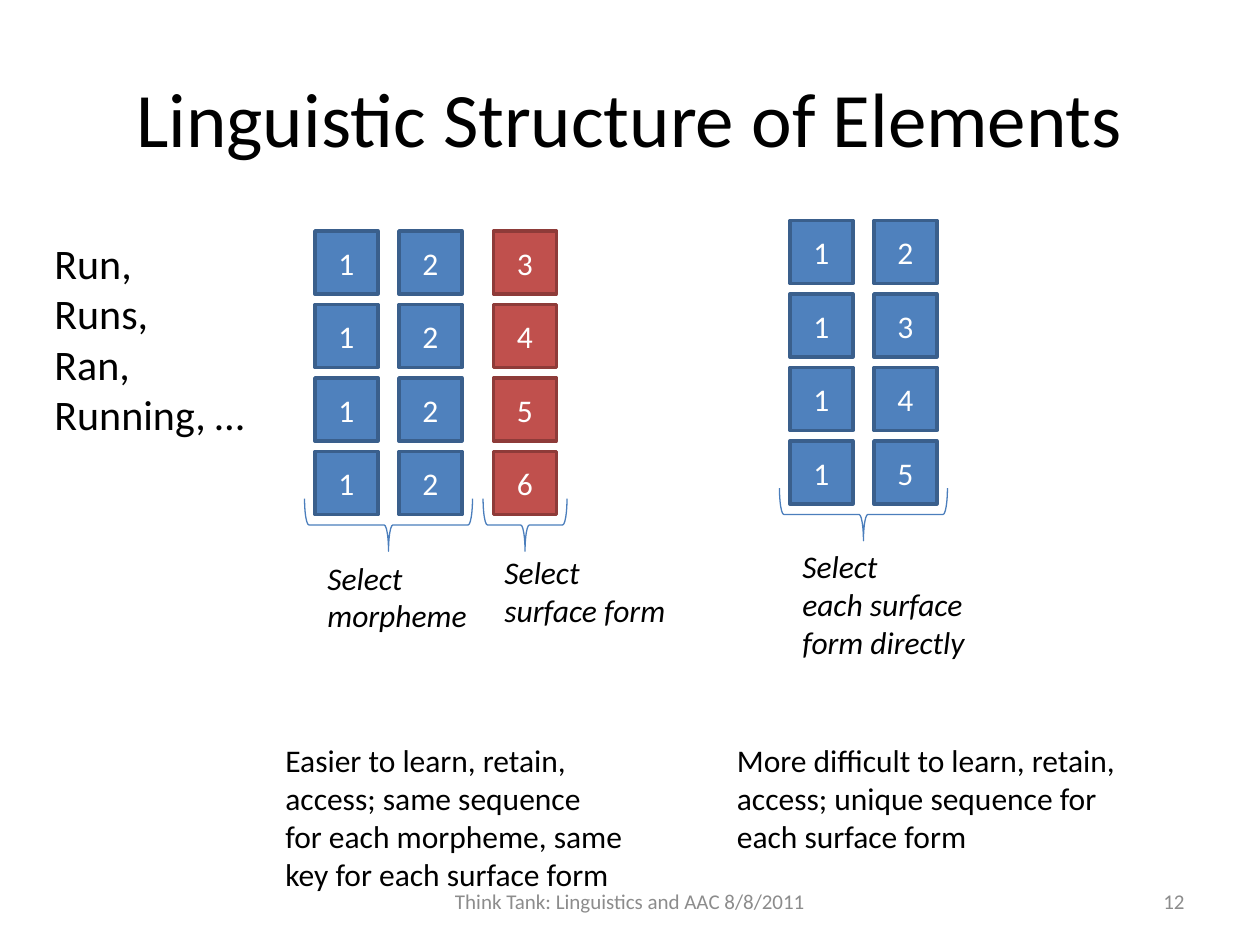
from pptx import Presentation
from pptx.dml.color import RGBColor
from pptx.enum.shapes import MSO_SHAPE as Preset
from pptx.enum.text import MSO_ANCHOR as Anchor, MSO_AUTO_SIZE as AutoSize, PP_ALIGN as Align
from pptx.util import Pt

BLACK, WHITE, GREY = "000000", "FFFFFF", "8C8C8C"
BLUE, RED = ("4F81BD", "3A5F8C"), ("C0504D", "8E3B39")
BRACE_LINE = "4B7EBC"
TILE, ROW_PITCH = 36, 42
BRACE_MARGIN, BRACE_DROP, BRACE_HEIGHT = 6, 27, 30

# Each group: top, then columns as (left, colours, digits), top to bottom,
# then braces as (first column, last column)
KEY_GROUPS = [
    (132, [(180, BLUE, "1111"), (228, BLUE, "2222"), (282, RED, "3456")], [(0, 1), (2, 2)]),
    (126, [(451.4, BLUE, "1111"), (499.4, BLUE, "2345")], [(0, 1)]),
]

# Text: box (left, top, width, height), paragraphs as lists of lines, format
FITTED = {"size": 18}
CAPTION = {"size": 18, "italic": True}
FRAMED = {"anchor": Anchor.MIDDLE, "wrap": True}
FOOTER = FRAMED | {"size": 12, "color": GREY}
TEXTS = [
    ((36, 21.6, 648, 90), [["Linguistic Structure of Elements"]],
     FRAMED | {"size": 44, "align": Align.CENTER}),
    ((24, 132, 123.8, 123.8), [["Run,"], ["Runs,"], ["Ran,"], ["Running, …"]], {"size": 24}),
    ((180, 315.6, 96.5, 51), [["Select", "morpheme"]], CAPTION),
    ((281.2, 312.3, 107.3, 51), [["Select", "surface form"]], CAPTION),
    ((451.4, 309, 108, 72.7), [["Select", "each surface", "form directly"]], CAPTION),
    ((156, 420, 209.5, 94.3),
     [["Easier to learn, retain,"],
      ["access; same sequence", "for each morpheme, same", "key for each surface form"]], FITTED),
    ((414, 420, 234, 72.7),
     [["More difficult to learn, retain,"],
      ["access; unique sequence for ", "each surface form"]], FITTED),
    ((516, 500.5, 168, 28.8), [["12"]], FOOTER | {"align": Align.RIGHT}),
    ((246, 500.5, 228, 28.8), [["Think Tank: Linguistics and AAC 8/8/2011"]],
     FOOTER | {"align": Align.CENTER}),
]


def rgb(code):
    return RGBColor.from_string(code)


def write(frame, paragraphs, size, color=BLACK, italic=False, align=Align.LEFT,
          anchor=Anchor.TOP, wrap=False):
    frame.word_wrap = wrap
    frame.vertical_anchor = anchor
    frame.auto_size = AutoSize.NONE if wrap else AutoSize.SHAPE_TO_FIT_TEXT
    for index, lines in enumerate(paragraphs):
        paragraph = frame.add_paragraph() if index else frame.paragraphs[0]
        paragraph.alignment = align
        for number, line in enumerate(lines):
            if number:
                paragraph.add_line_break()
            run = paragraph.add_run()
            run.text = line
            font_format = {"name": "Calibri", "size": Pt(size), "italic": italic}
            for attribute, value in font_format.items():
                setattr(run.font, attribute, value)
            run.font.color.rgb = rgb(color)


def add_preset(shapes, preset, box, line_color, line_width):
    shape = shapes.add_shape(preset, *map(Pt, box))
    shape.shadow.inherit = False
    shape.line.color.rgb = rgb(line_color)
    shape.line.width = Pt(line_width)
    return shape


def add_key(shapes, left, top, digit, colors):
    fill, outline = colors
    key = add_preset(shapes, Preset.RECTANGLE, (left, top, TILE, TILE), outline, 2)
    key.fill.solid()
    key.fill.fore_color.rgb = rgb(fill)
    write(key.text_frame, [[digit]], 18, WHITE, align=Align.CENTER,
          anchor=Anchor.MIDDLE, wrap=True)


def add_brace(shapes, left, right, top):
    """Add a right brace turned to point down, spanning left to right."""
    span = right - left
    box = ((left + right - BRACE_HEIGHT) / 2, top + (BRACE_HEIGHT - span) / 2,
           BRACE_HEIGHT, span)
    brace = add_preset(shapes, Preset.RIGHT_BRACE, box, BRACE_LINE, 0.75)
    brace.fill.background()
    brace.rotation = 90


def main():
    deck = Presentation()
    deck.slide_width, deck.slide_height = Pt(720), Pt(540)
    shapes = deck.slides.add_slide(deck.slide_layouts[6]).shapes

    for top, columns, braces in KEY_GROUPS:
        for left, colors, digits in columns:
            for row, digit in enumerate(digits):
                add_key(shapes, left, top + row * ROW_PITCH, digit, colors)
        brace_top = top + (len(columns[0][2]) - 1) * ROW_PITCH + BRACE_DROP
        for first, last in braces:
            add_brace(shapes, columns[first][0] - BRACE_MARGIN,
                      columns[last][0] + TILE + BRACE_MARGIN, brace_top)

    for box, paragraphs, text_format in TEXTS:
        write(shapes.add_textbox(*map(Pt, box)).text_frame, paragraphs, **text_format)

    deck.save("out.pptx")


if __name__ == "__main__":
    main()
